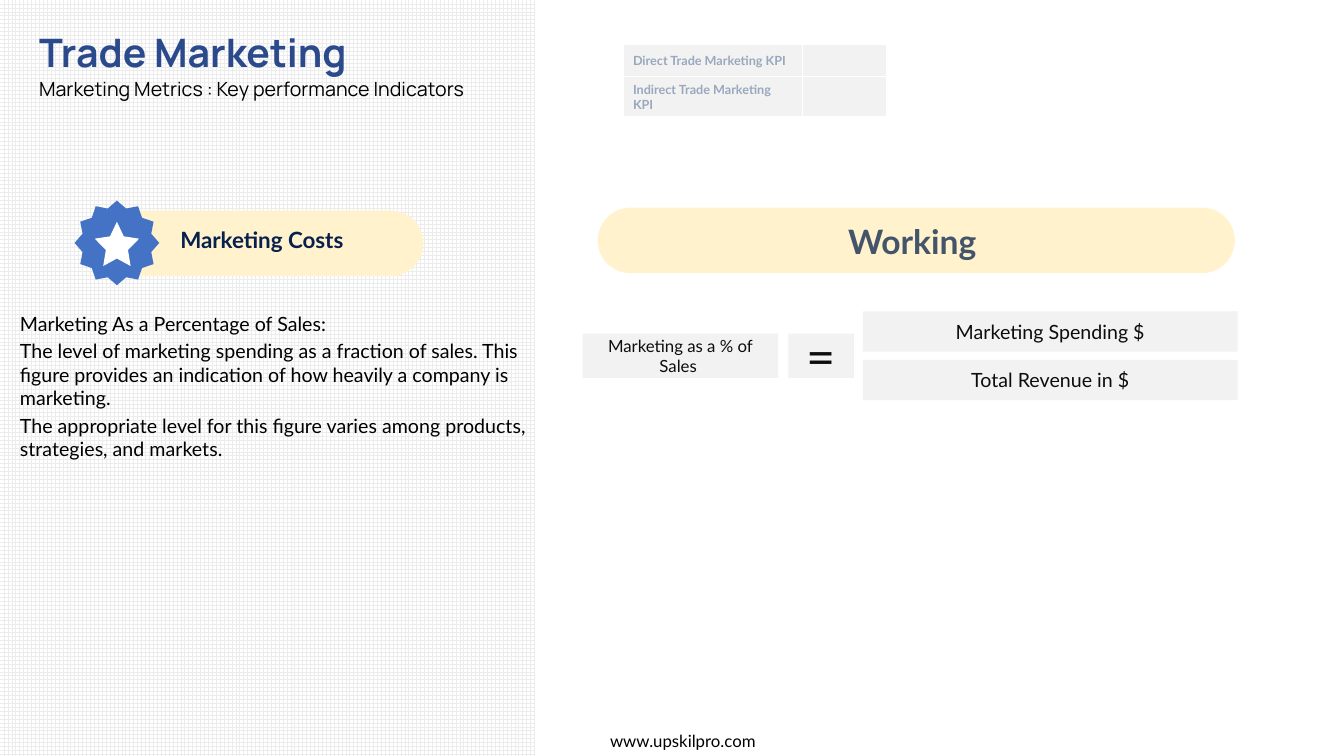
from lxml import etree
from pptx import Presentation
from pptx.dml.color import RGBColor
from pptx.enum.dml import MSO_PATTERN
from pptx.enum.shapes import MSO_SHAPE
from pptx.enum.text import MSO_ANCHOR, PP_ALIGN
from pptx.oxml.ns import qn
from pptx.util import Inches, Pt

RECTANGLE, ROUNDED = MSO_SHAPE.RECTANGLE, MSO_SHAPE.ROUNDED_RECTANGLE
BADGE, STAR = MSO_SHAPE.STAR_12_POINT, MSO_SHAPE.STAR_5_POINT
GRID = MSO_PATTERN.LARGE_GRID
TOP, MIDDLE, BOTTOM = MSO_ANCHOR.TOP, MSO_ANCHOR.MIDDLE, MSO_ANCHOR.BOTTOM
LEFT, CENTER = PP_ALIGN.LEFT, PP_ALIGN.CENTER

WIDTH, HEIGHT = Inches(13.33), Inches(7.5)
COLUMNS, ROWS = 160, 90
CREAM, GREY, WHITE, INK = "FFF2CC", "F2F2F2", "FFFFFF", "0D0D0D"


def color(value):
    return RGBColor.from_string(value)


def across(columns):
    return round(WIDTH * columns / COLUMNS)


def down(rows):
    return round(HEIGHT * rows / ROWS)


def place(box):
    left, top, width, height = box
    return across(left), down(top), across(width), down(height)


def inside(box, left, top, width, height):
    return box[0] + left, box[1] + top, width, height


def font_format(size, ink="000000", bold=False, name="Lato"):
    return {"size": Pt(size), "bold": bold, "name": name, "ink": ink}


def write(frame, lines, anchor=TOP, align=LEFT, wrap=True):
    frame.word_wrap = wrap
    frame.vertical_anchor = anchor
    for index, (text, font, spacing) in enumerate(lines):
        para = frame.paragraphs[0] if index == 0 else frame.add_paragraph()
        para.alignment = align
        for key, value in spacing.items():
            setattr(para, key, value)
        span = para.add_run()
        span.text = text
        for key, value in font.items():
            if key == "ink":
                span.font.color.rgb = color(value)
            else:
                setattr(span.font, key, value)


def add_text(page, box, lines, **layout):
    write(page.shapes.add_textbox(*place(box)).text_frame, lines, **layout)


def add_block(page, kind, box, fill, adjust=None):
    shape = page.shapes.add_shape(kind, *place(box))
    shape.shadow.inherit = False
    shape.line.fill.background()
    shape.fill.solid()
    shape.fill.fore_color.rgb = color(fill)
    if adjust is not None:
        shape.adjustments[0] = adjust
    return shape


def add_panel(page, box):
    panel = add_block(page, RECTANGLE, box, WHITE)
    panel.fill.patterned()
    panel.fill.pattern = GRID
    panel.fill.fore_color.rgb = color("ECECEC")
    panel.fill.back_color.rgb = color(WHITE)


def add_header(page, box):
    add_text(page, box, [
        ("Trade Marketing", font_format(28, "2A4A8B", True, "Manrope"), {}),
        ("Marketing Metrics : Key performance Indicators",
         font_format(14, name="Manrope"), {"line_spacing": 1.07, "space_after": Pt(8)}),
    ])


def add_metric(page, box):
    width, height = box[2:]
    add_block(page, ROUNDED, inside(box, 1.68, 1.2, width - 1.68, 7.8), CREAM, 0.5)
    add_block(page, BADGE, inside(box, 0, 0, height, height), "4472C4", 0.42)
    add_block(page, STAR, inside(box, 2.4, 2.52, 5.28, 5.28), WHITE, 0.25)
    add_text(page, inside(box, 11.4, 2.4, 21.84, 4.44),
             [("Marketing Costs", font_format(16, "08204D", True), {})],
             anchor=MIDDLE, wrap=False)


def add_description(page, box):
    texts = (
        "Marketing As a Percentage of Sales:",
        "The level of marketing spending as a fraction of sales. This figure provides "
        "an indication of how heavily a company is marketing.",
        "The appropriate level for this figure varies among products, strategies, and markets.",
    )
    add_text(page, box, [
        (text, font_format(14), {"space_before": Pt(2.8 if index else 0)})
        for index, text in enumerate(texts)
    ])


def add_working(page, box):
    width, height = box[2:]
    add_block(page, ROUNDED, box, CREAM, 0.5)
    add_text(page, inside(box, 3, 0.96, width - 6, 6),
             [("Working ", font_format(24, "44546A", True), {})],
             anchor=BOTTOM, align=CENTER)


def add_formula(page, box):
    width, height = box[2:]
    half, fraction = 4.8, 33.36
    terms = (
        ("Marketing as a % of Sales ", 12, (0, 2.64, 23.28, 5.28)),
        ("=", 36, (24.48, 2.64, 7.8, 5.28)),
        ("Marketing Spending $", 14, (fraction, 0, width - fraction, half)),
        ("Total Revenue in $", 14, (fraction, height - half, width - fraction, half)),
    )
    for text, size, cell in terms:
        block = add_block(page, RECTANGLE, inside(box, *cell), GREY)
        write(block.text_frame, [(text, font_format(size, INK), {})],
              anchor=MIDDLE, align=CENTER)


def add_border(cell):
    properties = cell._tc.get_or_add_tcPr()
    for index, side in enumerate(("a:lnL", "a:lnR", "a:lnT", "a:lnB")):
        line = etree.Element(qn(side), w=str(Pt(1)))
        fill = etree.SubElement(line, qn("a:solidFill"))
        etree.SubElement(fill, qn("a:srgbClr"), val=WHITE)
        properties.insert(index, line)


def add_kpi_table(page, box):
    labels = ("Direct Trade Marketing KPI", "Indirect Trade Marketing KPI")
    table = page.shapes.add_table(len(labels), 2, *place(box)).table
    for column, share in zip(table.columns, (0.68, 0.32)):
        column.width = across(box[2] * share)
    for row, label in zip(table.rows, labels):
        row.height = down(box[3] / len(labels))
        name, value = row.cells
        write(name.text_frame, [(label, font_format(9, "99A8BD", True), {})])
        etree.SubElement(value.text_frame.paragraphs[0]._p, qn("a:endParaRPr"), sz="900")
        for cell in (name, value):
            cell.vertical_anchor = MIDDLE
            cell.fill.solid()
            cell.fill.fore_color.rgb = color(GREY)
            add_border(cell)


def add_footer(page, box):
    add_text(page, box, [("www.upskilpro.com", font_format(12), {})], align=CENTER)


def main():
    deck = Presentation()
    deck.slide_width, deck.slide_height = WIDTH, HEIGHT
    page = deck.slides.add_slide(deck.slide_layouts[6])
    add_panel(page, (0, 0, 63.72, ROWS))
    add_description(page, (1.2, 36.48, 63.36, 20))
    add_metric(page, (8.88, 23.88, 41.52, 10.08))
    add_formula(page, (69.36, 37.08, 78, 10.56))
    add_working(page, (71.16, 24.72, 75.84, 7.8))
    add_header(page, (3.48, 2.76, 104.4, 9.84))
    add_footer(page, (64.8, 86.4, 33, 3.6))
    add_kpi_table(page, (74.16, 5.28, 31.44, 7.68))
    deck.save("out.pptx")


if __name__ == "__main__":
    main()
